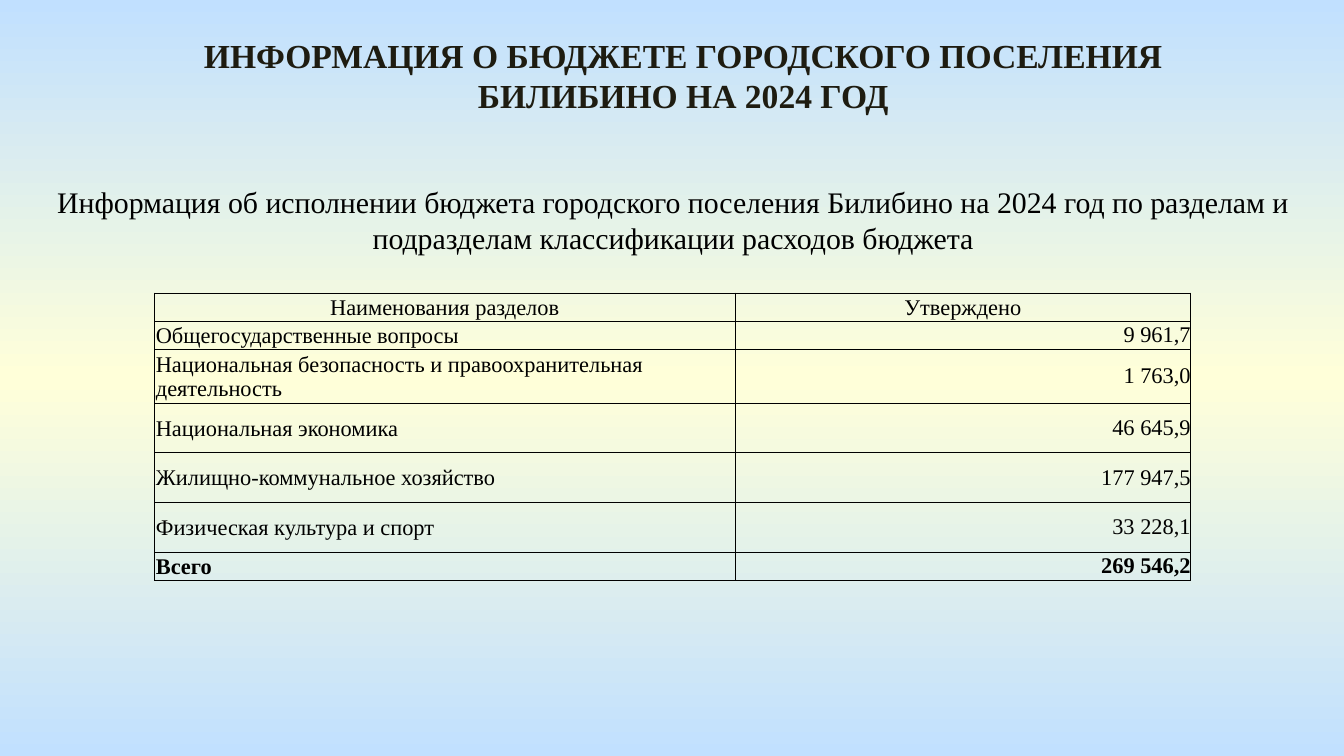
"""Build the slide with the 2024 budget expenditure table."""
from copy import deepcopy
from dataclasses import dataclass

from lxml import etree
from pptx import Presentation
from pptx.dml.color import RGBColor
from pptx.enum import text as t
from pptx.oxml import ns
from pptx.util import Inches, Pt

FONT = "Times New Roman"
BLACK = RGBColor(0x00, 0x00, 0x00)
DARK = RGBColor(0x1E, 0x1C, 0x11)
SKY = RGBColor(0xC1, 0xE0, 0xFF)
CREAM = RGBColor(0xFF, 0xFF, 0xD9)
COLUMNS = (4.32, 3.39)


@dataclass
class Row:
    name: str
    amount: str
    height: float = 0.21
    bold: bool = False
    header: bool = False


ROWS = [
    Row("Наименования разделов", "Утверждено", header=True),
    Row("Общегосударственные вопросы", "9 961,7"),
    Row("Национальная безопасность и правоохранительная деятельность", "1 763,0", 0.4),
    Row("Национальная экономика", "46 645,9", 0.37),
    Row("Жилищно-коммунальное хозяйство", "177 947,5", 0.37),
    Row("Физическая культура и спорт", "33 228,1", 0.37),
    Row("Всего", "269 546,2", bold=True),
]


def set_background(s) -> None:
    fill = s.background.fill
    fill.gradient()
    fill.gradient_angle = 90
    stops = s.element.find(".//" + ns.qn("a:gsLst"))
    stops.append(deepcopy(stops[-1]))
    for stop, color, position in zip(fill.gradient_stops, (SKY, CREAM, SKY), (0, 0.5, 1)):
        stop.color.rgb = color
        stop.position = position


def format_paragraph(p, size: float, color: RGBColor, align, bold: bool = False) -> None:
    p.alignment = align
    p.font.name = FONT
    p.font.size = Pt(size)
    p.font.color.rgb = color
    p.font.bold = bold


def write_heading(sp, text: str, size: float, color: RGBColor, bold: bool = False) -> None:
    tf = sp.text_frame
    tf.text = text
    tf.word_wrap = True
    tf.auto_size = t.MSO_AUTO_SIZE.NONE
    tf.vertical_anchor = t.MSO_ANCHOR.TOP
    format_paragraph(tf.paragraphs[0], size, color, t.PP_ALIGN.CENTER, bold)


def add_borders(cell) -> None:
    props = cell._tc.get_or_add_tcPr()
    for side in ("a:lnL", "a:lnR", "a:lnT", "a:lnB"):
        line = etree.SubElement(props, ns.qn(side), w=str(Pt(0.5)))
        fill = etree.SubElement(line, ns.qn("a:solidFill"))
        etree.SubElement(fill, ns.qn("a:srgbClr"), val=str(BLACK))


def write_cell(cell, text: str, align, inset: float, bold: bool) -> None:
    cell.text = text
    cell.vertical_anchor = t.MSO_ANCHOR.MIDDLE
    cell.margin_left = cell.margin_right = cell.margin_top = Inches(inset)
    cell.margin_bottom = 0
    format_paragraph(cell.text_frame.paragraphs[0], 12, BLACK, align, bold)
    add_borders(cell)
    cell.fill.background()


def add_budget_table(s) -> None:
    height = sum(row.height for row in ROWS)
    table = s.shapes.add_table(len(ROWS), len(COLUMNS), Inches(1.15), Inches(2.18),
                               Inches(sum(COLUMNS)), Inches(height)).table
    table.first_row = table.horz_banding = False
    for column, width in zip(table.columns, COLUMNS):
        column.width = Inches(width)
    for i, row in enumerate(ROWS):
        table.rows[i].height = Inches(row.height)
        left, right = t.PP_ALIGN.LEFT, t.PP_ALIGN.RIGHT
        if row.header:
            left = right = t.PP_ALIGN.CENTER
        write_cell(table.cell(i, 0), row.name, left, 0.01, row.bold)
        write_cell(table.cell(i, 1), row.amount, right, 0.01 if row.header else 0, row.bold)


def main() -> None:
    prs = Presentation()
    prs.slide_width, prs.slide_height = Inches(10), Inches(10 * 9 / 16)
    s = prs.slides.add_slide(prs.slide_layouts[5])
    set_background(s)
    title = s.shapes.title
    title.left, title.top = Inches(1.22), Inches(0.21)
    title.width, title.height = Inches(7.73), Inches(0.71)
    write_heading(title, "ИНФОРМАЦИЯ О БЮДЖЕТЕ ГОРОДСКОГО ПОСЕЛЕНИЯ БИЛИБИНО НА 2024 ГОД",
                  18, DARK, True)
    subtitle = s.shapes.add_textbox(Inches(0.01), Inches(1.32), Inches(10), Inches(0.64))
    write_heading(subtitle, "Информация об исполнении бюджета городского поселения Билибино "
                  "на 2024 год по разделам и подразделам классификации расходов бюджета",
                  16, BLACK)
    add_budget_table(s)
    prs.save("out.pptx")


if __name__ == "__main__":
    main()
